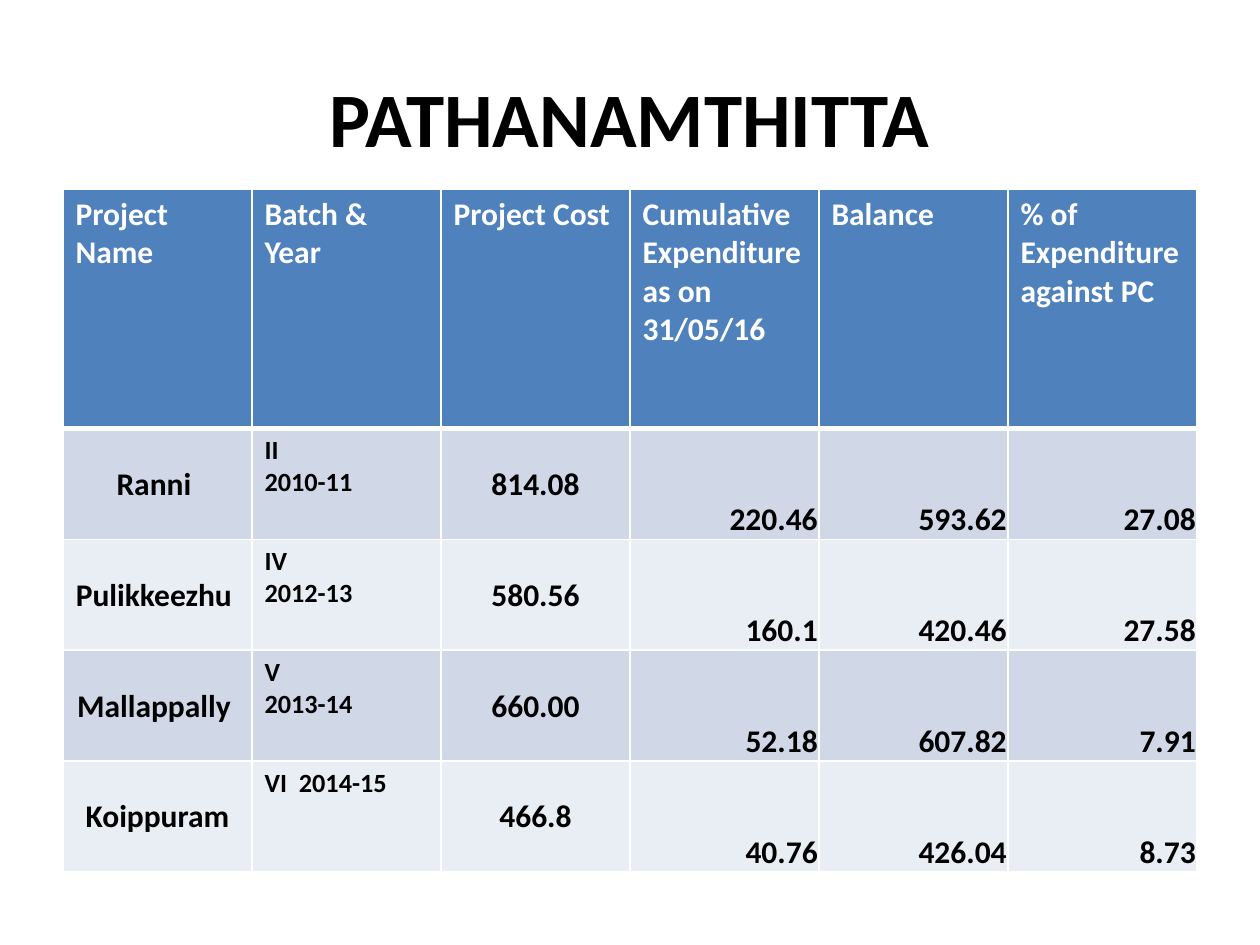
from dataclasses import dataclass
from typing import NamedTuple

from lxml import etree
from pptx import Presentation
from pptx import util as u
from pptx.dml.color import RGBColor
from pptx.enum import text
from pptx.oxml import ns

PX = 9144  # EMU in one px, 100 px to the inch


@dataclass(frozen=True)
class Theme:
    font: str = "Calibri"
    ink: str = "000000"
    white: str = "FFFFFF"
    header: str = "4F81BD"
    bands: tuple = ("D0D8E8", "E9EDF4")
    title_size: int = 44
    table_size: int = 18
    batch_size: int = 15
    rule: int = 1
    header_rule: int = 3


THEME = Theme()


class Project(NamedTuple):
    name: str
    batch: str  # a newline starts a paragraph, a vertical tab breaks a line
    cost: str
    spent: str
    balance: str
    percent: str


class CellStyle(NamedTuple):
    align: text.PP_ALIGN | None = None
    anchor: text.MSO_ANCHOR = text.MSO_ANCHOR.TOP
    size: int = THEME.table_size
    tight: bool = False


PLAIN = CellStyle()
BATCH = CellStyle(size=THEME.batch_size)
CENTRED = CellStyle(text.PP_ALIGN.CENTER, text.MSO_ANCHOR.MIDDLE, tight=True)
FIGURE = CellStyle(text.PP_ALIGN.RIGHT, text.MSO_ANCHOR.BOTTOM, tight=True)
COLUMN_STYLES = (CENTRED, BATCH, CENTRED, FIGURE, FIGURE, FIGURE)

HEADINGS = (
    "Project Name",
    "Batch & Year",
    "Project Cost",
    "Cumulative Expenditure as on 31/05/16",
    "Balance",
    "% of Expenditure against PC",
)
PROJECTS = (
    Project("Ranni ", "II \v2010-11", "814.08", "220.46", "593.62", "27.08"),
    Project("Pulikkeezhu ", "IV\n2012-13", "580.56", "160.1", "420.46", "27.58"),
    Project("Mallappally ", "V\n2013-14", "660.00", "52.18", "607.82", "7.91"),
    Project("Koippuram", "VI  2014-15", "466.8", "40.76", "426.04", "8.73"),
)


def px(length: int) -> u.Emu:
    return u.Emu(length * PX)


def write(frame, words: str, size: int, colour: str, align=None) -> None:
    for index, line in enumerate(words.split("\n")):
        para = frame.add_paragraph() if index else frame.paragraphs[0]
        if align is not None:
            para.alignment = align
        for part, piece in enumerate(line.split("\v")):
            if part:
                para.add_line_break()
            span = para.add_run()
            span.text = piece
            span.font.name = THEME.font
            span.font.size = u.Pt(size)
            span.font.bold = True
            span.font.color.rgb = RGBColor.from_string(colour)


def draw_borders(cell, top: int, bottom: int) -> None:
    properties = cell._tc.get_or_add_tcPr()
    widths = {"L": THEME.rule, "R": THEME.rule, "T": top, "B": bottom}
    for side, width in widths.items():
        line = etree.SubElement(properties, ns.qn(f"a:ln{side}"), w=str(u.Pt(width)))
        fill = etree.SubElement(line, ns.qn("a:solidFill"))
        etree.SubElement(fill, ns.qn("a:srgbClr"), val=THEME.white)


def fill_cell(cell, words: str, style: CellStyle, fill: str, colour: str,
              top: int = THEME.rule, bottom: int = THEME.rule) -> None:
    draw_borders(cell, top, bottom)
    cell.fill.solid()
    cell.fill.fore_color.rgb = RGBColor.from_string(fill)
    cell.vertical_anchor = style.anchor
    if style.tight:
        cell.margin_left = cell.margin_top = cell.margin_right = px(1)
        cell.margin_bottom = 0
    write(cell.text_frame, words, style.size, colour, style.align)


def add_title(page, words: str) -> None:
    box = page.shapes.title
    box.left, box.top, box.width, box.height = map(px, (50, 30, 900, 125))
    box.text_frame.vertical_anchor = text.MSO_ANCHOR.MIDDLE
    write(box.text_frame, words, THEME.title_size, THEME.ink, text.PP_ALIGN.CENTER)


def add_project_table(page) -> None:
    frame = page.shapes.add_table(len(PROJECTS) + 1, len(HEADINGS),
                                  px(50), px(150), px(900), px(542))
    table = frame.table
    for index, row in enumerate(table.rows):
        row.height = px(88 if index else 190)

    # Header row
    for column, heading in enumerate(HEADINGS):
        fill_cell(table.cell(0, column), heading, PLAIN, THEME.header, THEME.white,
                  bottom=THEME.header_rule)

    # Project rows in alternating bands
    for index, project in enumerate(PROJECTS):
        band = THEME.bands[index % 2]
        top = THEME.rule if index else THEME.header_rule
        for column, (words, style) in enumerate(zip(project, COLUMN_STYLES)):
            fill_cell(table.cell(index + 1, column), words, style, band, THEME.ink, top=top)


def main() -> None:
    deck = Presentation()
    deck.slide_width, deck.slide_height = px(1000), px(750)
    page = deck.slides.add_slide(deck.slide_layouts[5])
    add_title(page, "PATHANAMTHITTA")
    add_project_table(page)
    deck.save("out.pptx")


if __name__ == "__main__":
    main()
